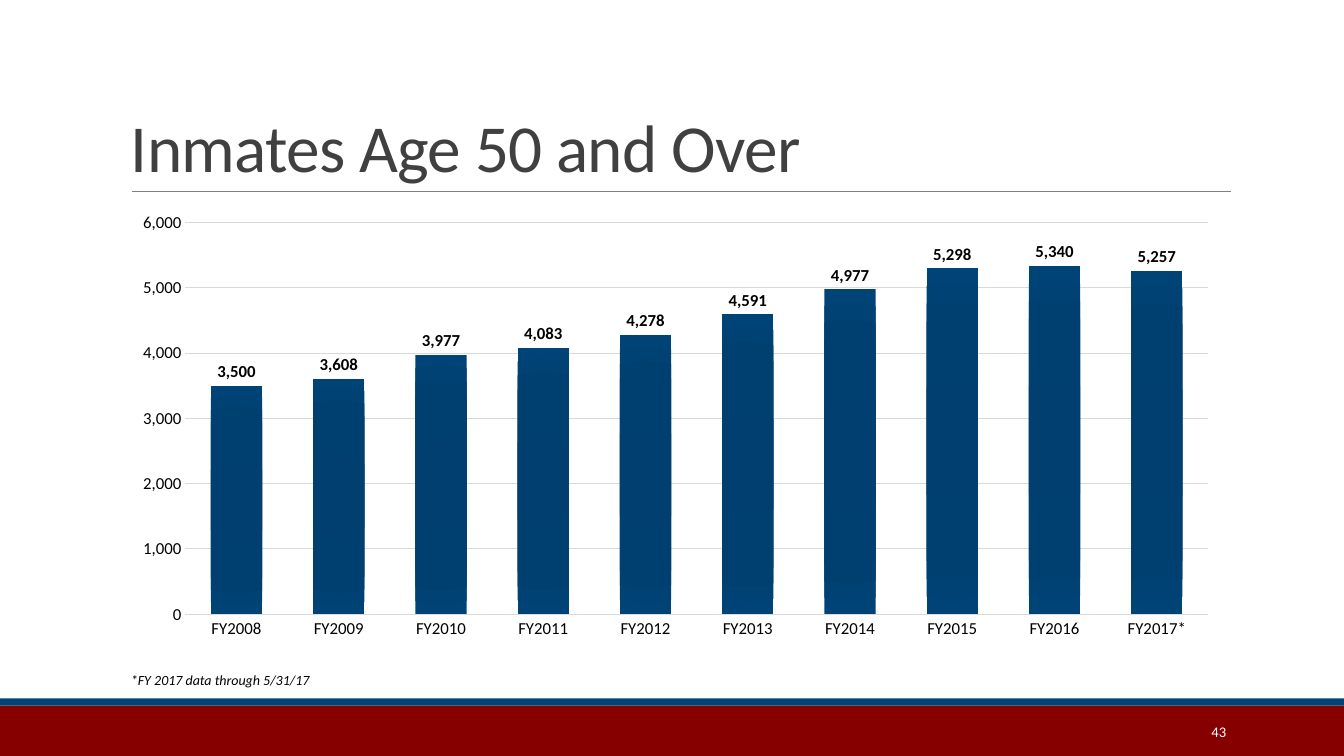
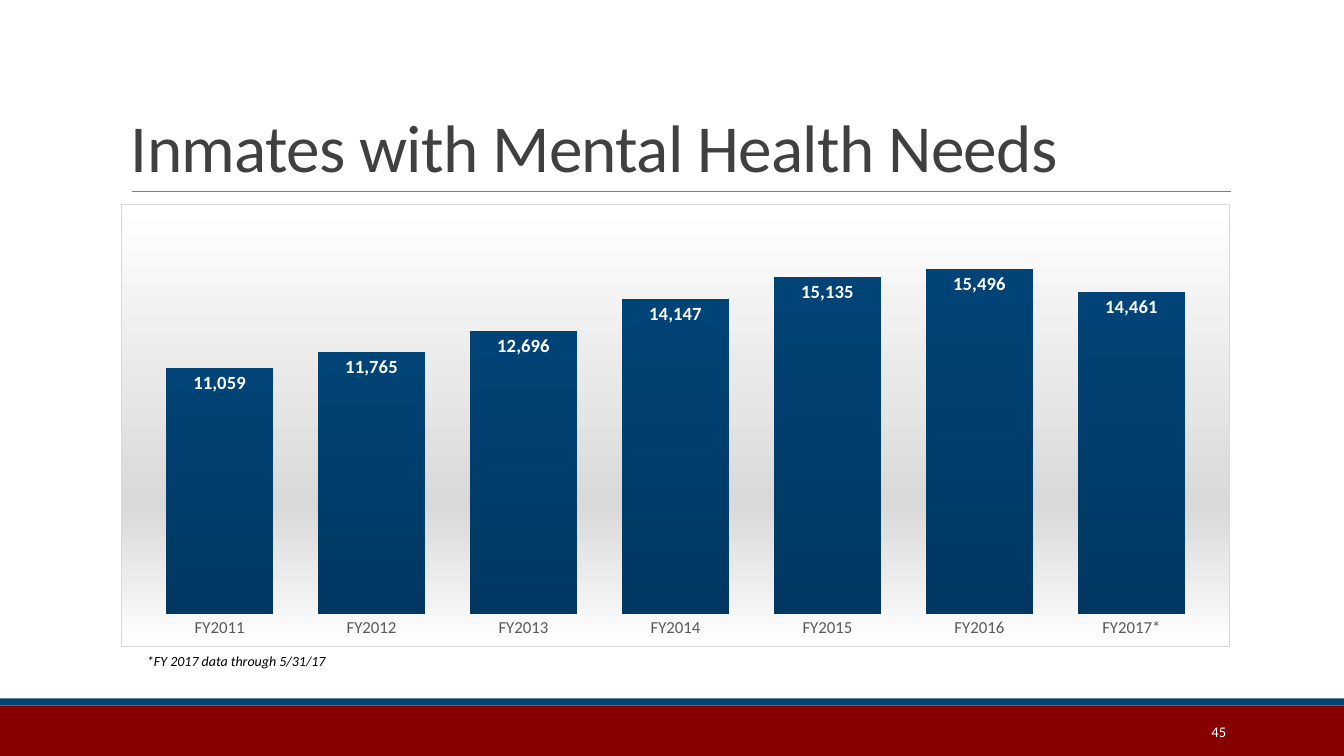
from lxml import etree
from pptx import Presentation
from pptx.chart.data import CategoryChartData
from pptx.dml.color import RGBColor
from pptx.enum.chart import XL_CHART_TYPE, XL_LABEL_POSITION, XL_TICK_MARK
from pptx.enum.shapes import MSO_CONNECTOR, MSO_SHAPE
from pptx.enum.text import MSO_ANCHOR, PP_ALIGN
from pptx.oxml import parse_xml
from pptx.oxml.ns import nsdecls, qn
from pptx.util import Inches, Pt

COLUMN = XL_CHART_TYPE.COLUMN_CLUSTERED
OUTSIDE, INSIDE = XL_LABEL_POSITION.OUTSIDE_END, XL_LABEL_POSITION.INSIDE_END
NO_TICK = XL_TICK_MARK.NONE
RECTANGLE = MSO_SHAPE.RECTANGLE
STRAIGHT = MSO_CONNECTOR.STRAIGHT
TOP, MIDDLE, BOTTOM = MSO_ANCHOR.TOP, MSO_ANCHOR.MIDDLE, MSO_ANCHOR.BOTTOM
LEFT, RIGHT = PP_ALIGN.LEFT, PP_ALIGN.RIGHT

RED = RGBColor(0x86, 0x00, 0x00)
NAVY = RGBColor(0x00, 0x43, 0x76)
NAVY_MID = RGBColor(0x00, 0x40, 0x71)
NAVY_DEEP = RGBColor(0x00, 0x3F, 0x6F)
NAVY_CORE = RGBColor(0x00, 0x3E, 0x6E)
NAVY_DARK = RGBColor(0x00, 0x38, 0x63)
RULE_GRAY = RGBColor(0x80, 0x80, 0x80)
TITLE_GRAY = RGBColor(0x40, 0x40, 0x40)
AXIS_GRAY = RGBColor(0x59, 0x59, 0x59)
PALE_GRAY = RGBColor(0xD9, 0xD9, 0xD9)
BLACK = RGBColor(0, 0, 0)
WHITE = RGBColor(0xFF, 0xFF, 0xFF)

FONT = "Calibri"
WIDTH, HEIGHT = 13.33, 7.5
CHART_BOX = (1.2, 2.02, 11, 4.4)
NUMBER_FORMAT = "#,##0"
DATA_NOTE = "*FY 2017 data through 5/31/17"
DOWNWARD = '<a:lin ang="5400000" scaled="0"/>'
CIRCULAR = ('<a:path path="circle"><a:fillToRect l="100000" t="100000" '
            'r="100000" b="100000"/></a:path>')


def set_font(font, size, color, **extra):
    values = {"name": FONT, "size": Pt(size), **extra}
    for name, value in values.items():
        setattr(font, name, value)
    font.color.rgb = color


def add_band(page, top, height, color):
    band = page.shapes.add_shape(
        RECTANGLE, 0, Inches(top), Inches(WIDTH), Inches(height))
    band.shadow.inherit = False
    band.fill.solid()
    band.fill.fore_color.rgb = color
    band.line.fill.background()


def add_rule(page, left, right, top):
    rule = page.shapes.add_connector(
        STRAIGHT, Inches(left), Inches(top), Inches(right), Inches(top))
    rule.line.color.rgb = RULE_GRAY
    rule.line.width = Pt(0.5)
    etree.SubElement(rule._element.spPr, qn("a:effectLst"))


def add_text(page, text, area, size, color, anchor=TOP, align=LEFT, **extra):
    box = page.shapes.add_textbox(*map(Inches, area))
    frame = box.text_frame
    frame.word_wrap = True
    frame.vertical_anchor = anchor
    para = frame.paragraphs[0]
    para.alignment = align
    span = para.add_run()
    span.text = text
    set_font(span.font, size, color, **extra)
    return para


def add_title(page, text):
    para = add_text(page, text, (1.2, 0.31, 11, 1.59), 48, TITLE_GRAY, BOTTOM)
    para.line_spacing = 0.85
    para.runs[0].font._element.set("spc", "-50")


def add_page(deck, title, number):
    page = deck.slides.add_slide(deck.slide_layouts[6])
    add_band(page, 7, 0.5, RED)
    add_band(page, 6.93, 0.07, NAVY)
    add_rule(page, 1.31, 12.21, 1.9)
    add_title(page, title)
    add_text(page, str(number), (10.83, 7.06, 1.43, 0.4), 10.5, WHITE,
             MIDDLE, RIGHT)
    return page


def add_note(page, left, top):
    add_text(page, DATA_NOTE, (left, top, 3.44, 0.27), 10, BLACK, italic=True)


def gradient(stops, direction):
    marks = "".join(
        f'<a:gs pos="{position * 1000}"><a:srgbClr val="{color}"/></a:gs>'
        for position, color in stops)
    return parse_xml(f'<a:gradFill {nsdecls("a")} rotWithShape="1">'
                     f'<a:gsLst>{marks}</a:gsLst>{direction}</a:gradFill>')


def add_columns(page, first_year, values, top_value, gap, stops, direction,
                axis_color, label_size, label_color, label_place):
    years = [f"FY{first_year + step}" for step in range(len(values))]
    years[-1] += "*"
    data = CategoryChartData(number_format=NUMBER_FORMAT)
    data.categories = years
    data.add_series("Series 1", values)
    chart = page.shapes.add_chart(COLUMN, *map(Inches, CHART_BOX), data).chart
    chart.has_title = chart.has_legend = False
    set_font(chart.font, 10, BLACK)

    plot = chart.plots[0]
    plot.gap_width = gap
    plot.vary_by_categories = False
    plot.series[0]._element.get_or_add_spPr().append(
        gradient(stops, direction))
    plot.has_data_labels = True
    labels = plot.data_labels
    label_format = {"show_value": True, "position": label_place,
                    "number_format": NUMBER_FORMAT,
                    "number_format_is_linked": False}
    for name, value in label_format.items():
        setattr(labels, name, value)
    set_font(labels.font, label_size, label_color, bold=True)

    for axis in (chart.category_axis, chart.value_axis):
        axis.major_tick_mark = axis.minor_tick_mark = NO_TICK
        set_font(axis.tick_labels.font, 12, axis_color)
        axis.format.line.fill.background()
    scale = {"minimum_scale": 0, "maximum_scale": top_value,
             "has_major_gridlines": False}
    for name, value in scale.items():
        setattr(chart.value_axis, name, value)
    return chart


def set_pale_line(line):
    line.color.rgb = PALE_GRAY
    line.width = Pt(0.75)


def show_grid(chart):
    axis = chart.value_axis
    axis.major_unit = 1000
    axis.has_major_gridlines = True
    axis.tick_labels.number_format = NUMBER_FORMAT
    axis.tick_labels.number_format_is_linked = False
    set_pale_line(axis.major_gridlines.format.line)
    set_pale_line(chart.category_axis.format.line)


def add_backdrop(chart):
    backdrop = parse_xml(
        f'<c:spPr {nsdecls("c", "a")}><a:ln w="9525"><a:solidFill>'
        f'<a:srgbClr val="{PALE_GRAY}"/></a:solidFill></a:ln></c:spPr>')
    backdrop.insert(0, gradient(
        [(0, WHITE), (68, PALE_GRAY), (100, WHITE)], DOWNWARD))
    chart._chartSpace.find(qn("c:chart")).addnext(backdrop)


def main():
    deck = Presentation()
    deck.slide_width, deck.slide_height = Inches(WIDTH), Inches(HEIGHT)

    page = add_page(deck, "Inmates Age 50 and Over", 43)
    chart = add_columns(
        page, 2008,
        [3500, 3608, 3977, 4083, 4278, 4591, 4977, 5298, 5340, 5257],
        6000, 100,
        [(0, NAVY_CORE), (34, NAVY_DEEP), (70, NAVY_MID), (100, NAVY)],
        CIRCULAR, BLACK, 12, BLACK, OUTSIDE)
    chart.plots[0].overlap = -24
    show_grid(chart)
    add_note(page, 1.2, 6.61)

    page = add_page(deck, "Inmates with Mental Health Needs", 45)
    chart = add_columns(
        page, 2011, [11059, 11765, 12696, 14147, 15135, 15496, 14461],
        18000, 41, [(0, NAVY), (100, NAVY_DARK)],
        DOWNWARD, AXIS_GRAY, 13.3, WHITE, INSIDE)
    chart.value_axis.visible = False
    add_backdrop(chart)
    add_note(page, 1.36, 6.42)

    deck.save("out.pptx")


if __name__ == "__main__":
    main()
